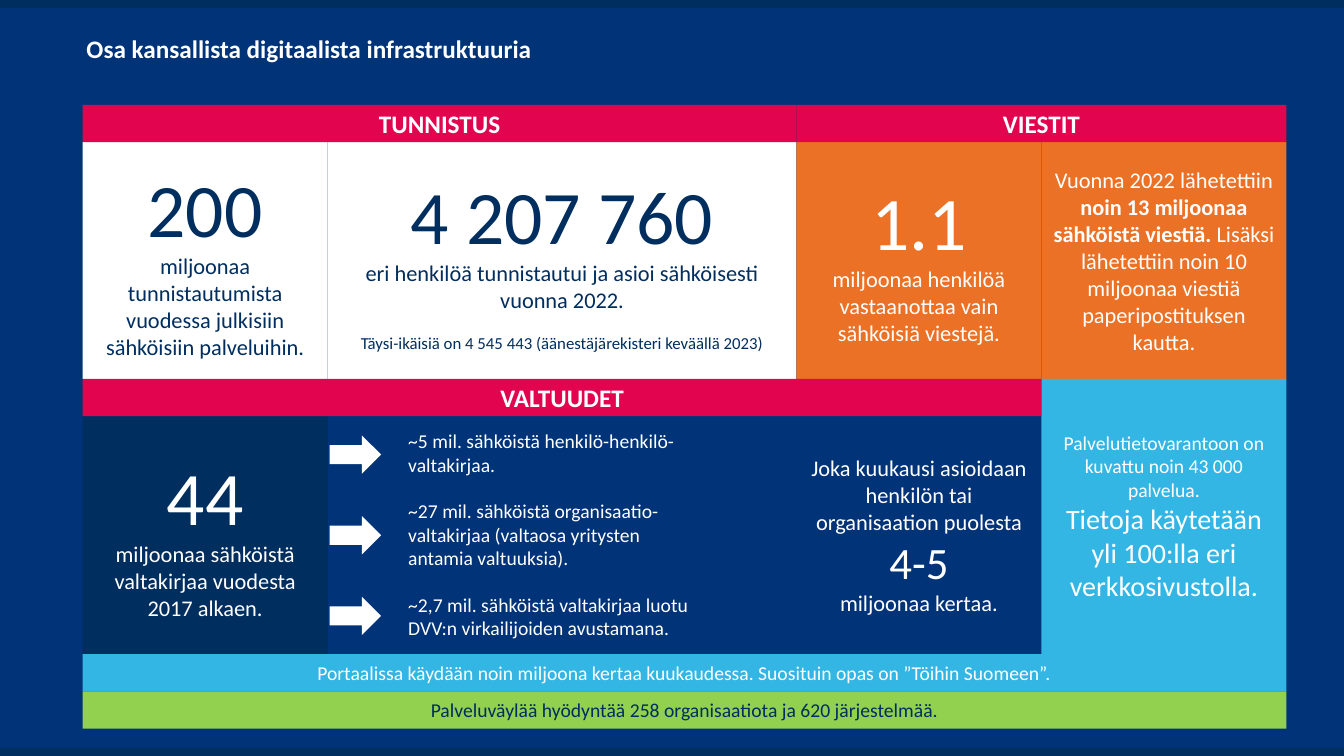
import pptx
import pptx.dml.color
import pptx.enum.shapes
import pptx.enum.text
import pptx.util

Inches = pptx.util.Inches
Pt = pptx.util.Pt
Shapes = pptx.enum.shapes.MSO_SHAPE
Align = pptx.enum.text.PP_ALIGN
Anchor = pptx.enum.text.MSO_ANCHOR

NAVY, BLUE, WHITE = "002E5F", "003378", "FFFFFF"
ORANGE, SKY, PINK, GREEN = "EA7125", "34B6E4", "E30450", "92D050"

STYLES = {
    "number": {"size": Pt(54), "bold": False},
    "count": {"size": Pt(32), "bold": False},
    "large": {"size": Pt(20), "bold": False},
    "heading": {"size": Pt(18), "bold": True},
    "body": {"size": Pt(16), "bold": False},
    "strong": {"size": Pt(16), "bold": True},
    "small": {"size": Pt(14), "bold": False},
    "note": {"size": Pt(12), "bold": False},
}
GAPS = {"note": Pt(14)}


def paint(fill, color):
    fill.solid()
    fill.fore_color.rgb = pptx.dml.color.RGBColor.from_string(color)


def write(text_frame, paragraphs, color, alignment, anchor):
    text_frame.word_wrap = True
    text_frame.vertical_anchor = anchor
    for index, runs in enumerate(paragraphs):
        paragraph = text_frame.add_paragraph() if index else text_frame.paragraphs[0]
        paragraph.alignment = alignment
        paragraph.space_before = GAPS.get(runs[0][0])
        for style, text in runs:
            run = paragraph.add_run()
            run.text = text
            paint(run.font.fill, color)
            for name, value in {"name": "Calibri", **STYLES[style]}.items():
                setattr(run.font, name, value)


presentation = pptx.Presentation()
presentation.slide_width = Inches(13.33)
presentation.slide_height = Inches(7.5)
slide = presentation.slides.add_slide(presentation.slide_layouts[6])
paint(slide.background.fill, BLUE)

columns = [0.82, 3.25, 7.9, 10.33, 12.76]
rows = [1.04, 1.41, 3.76, 4.13, 6.49, 6.86, 7.23]

cells = [
    (0, 1, 1, 2, WHITE, NAVY, [
        [("number", "200")],
        [("body", "miljoonaa tunnistautumista vuodessa julkisiin sähköisiin palveluihin.")]]),
    (1, 2, 1, 2, WHITE, NAVY, [
        [("number", "4 207 760")],
        [("body", "eri henkilöä tunnistautui ja asioi sähköisesti vuonna 2022.")],
        [("note", "Täysi-ikäisiä on 4 545 443 (äänestäjärekisteri keväällä 2023)")]]),
    (2, 3, 1, 2, ORANGE, WHITE, [
        [("number", "1.1")],
        [("body", "miljoonaa henkilöä vastaanottaa vain sähköisiä viestejä.")]]),
    (3, 4, 1, 2, ORANGE, WHITE, [
        [("body", "Vuonna 2022 lähetettiin "),
         ("strong", "noin 13 miljoonaa sähköistä viestiä. "),
         ("body", "Lisäksi lähetettiin noin 10 miljoonaa viestiä paperipostituksen kautta.")]]),
    (0, 1, 3, 4, NAVY, WHITE, [
        [("number", "44")],
        [("body", "miljoonaa sähköistä valtakirjaa vuodesta 2017 alkaen.")]]),
    (2, 3, 3, 4, BLUE, WHITE, [
        [("body", "Joka kuukausi asioidaan henkilön tai organisaation puolesta")],
        [("count", "4-5")],
        [("body", "miljoonaa kertaa.")]]),
    (3, 4, 2, 4, SKY, WHITE, [
        [("small", "Palvelutietovarantoon on kuvattu noin 43 000 palvelua.")],
        [("large", "Tietoja käytetään yli 100:lla eri verkkosivustolla.")]]),
    (0, 4, 4, 5, SKY, WHITE, [
        [("small", "Portaalissa käydään noin miljoona kertaa kuukaudessa. "
                   "Suosituin opas on ”Töihin Suomeen”.")]]),
    (0, 4, 5, 6, GREEN, NAVY, [
        [("small", "Palveluväylää hyödyntää 258 organisaatiota ja 620 järjestelmää.")]]),
    (0, 2, 0, 1, PINK, WHITE, [[("heading", "TUNNISTUS")]]),
    (2, 4, 0, 1, PINK, WHITE, [[("heading", "VIESTIT")]]),
    (0, 3, 2, 3, PINK, WHITE, [[("heading", "VALTUUDET")]]),
]

blocks = [(Shapes.RECTANGLE, 0, top, 13.33, 0.08, NAVY, WHITE, []) for top in (0, 7.42)]
for first, last, upper, lower, fill, color, paragraphs in cells:
    left, top = columns[first], rows[upper]
    blocks.append((Shapes.RECTANGLE, left, top, columns[last] - left, rows[lower] - top,
                   fill, color, paragraphs))
for index in range(3):
    blocks.append((Shapes.RIGHT_ARROW, 3.27, 4.32 + 0.8 * index, 0.51, 0.38,
                   WHITE, NAVY, []))

for kind, left, top, width, height, fill, color, paragraphs in blocks:
    shape = slide.shapes.add_shape(kind, *map(Inches, (left, top, width, height)))
    shape.shadow.inherit = False
    shape.line.fill.background()
    paint(shape.fill, fill)
    write(shape.text_frame, paragraphs, color, Align.CENTER, Anchor.MIDDLE)

labels = [
    (0.76, 0.28, 6.67, 0.4, "heading", "Osa kansallista digitaalista infrastruktuuria"),
    (3.95, 4.21, 2.91, 0.57, "small", "~5 mil. sähköistä henkilö-henkilö-valtakirjaa."),
    (3.95, 4.9, 2.91, 0.81, "small",
     "~27 mil. sähköistä organisaatio-valtakirjaa (valtaosa yritysten antamia valtuuksia)."),
    (3.95, 5.83, 3.25, 0.57, "small",
     "~2,7 mil. sähköistä valtakirjaa luotu DVV:n virkailijoiden avustamana."),
]
for left, top, width, height, style, text in labels:
    label = slide.shapes.add_textbox(*map(Inches, (left, top, width, height)))
    write(label.text_frame, [[(style, text)]], WHITE, Align.LEFT, Anchor.TOP)

presentation.save("out.pptx")
